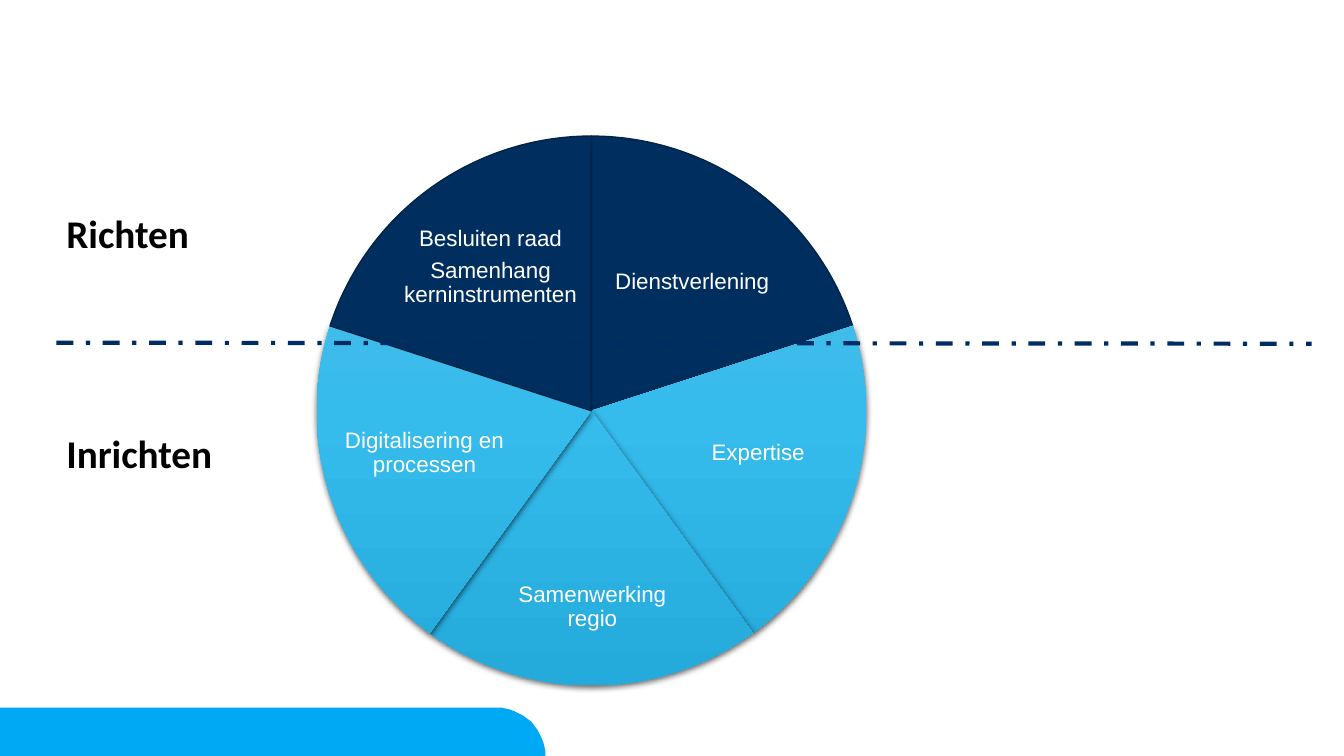
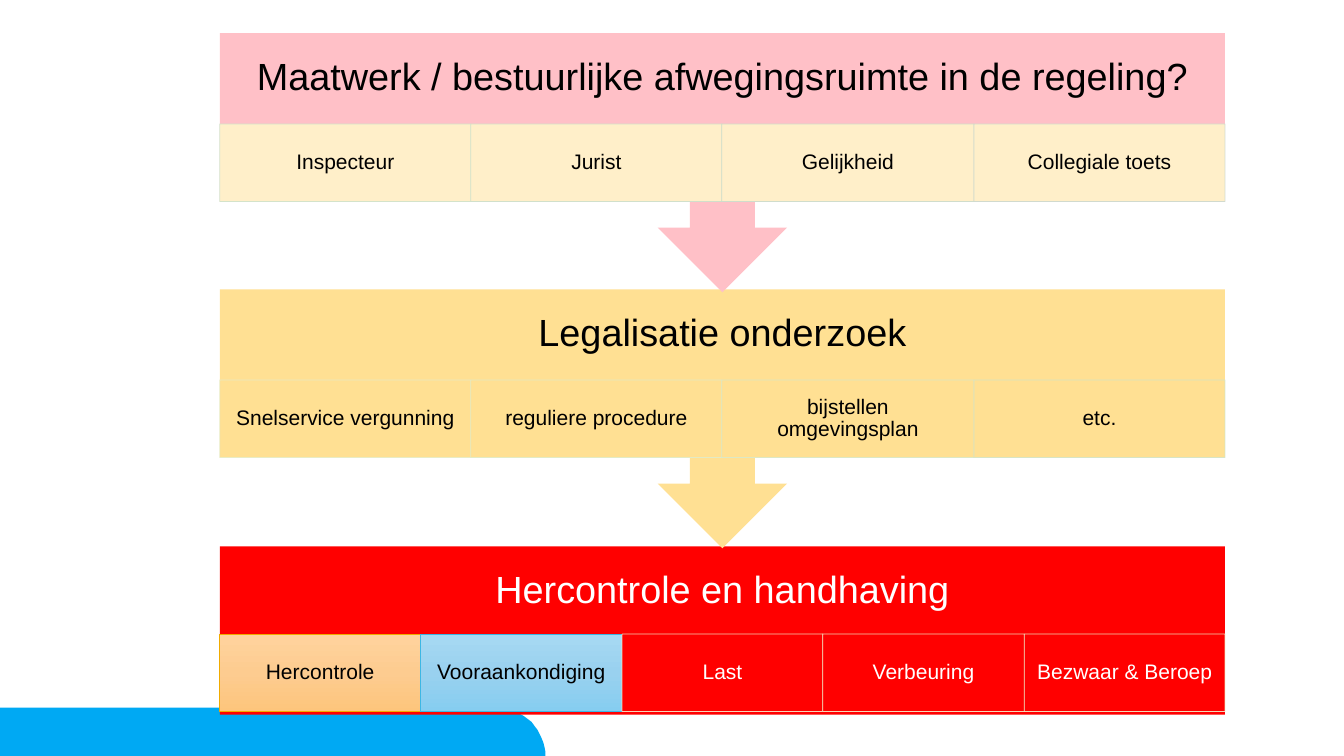
from copy import deepcopy
from dataclasses import dataclass
from math import cos, pi, sin
from typing import Optional, Union

from lxml.etree import SubElement
from pptx import Presentation
from pptx.dml.color import RGBColor
from pptx.enum.dml import MSO_LINE
from pptx.enum.shapes import MSO_CONNECTOR, MSO_SHAPE
from pptx.enum.text import MSO_ANCHOR, MSO_AUTO_SIZE, PP_ALIGN
from pptx.oxml.ns import qn
from pptx.presentation import Presentation as Deck
from pptx.shapes.autoshape import Shape
from pptx.slide import Slide
from pptx.text.text import TextFrame
from pptx.util import Emu, Pt

EMU_PER_PX = 9144
Fill = Union[str, tuple[str, str, str]]


@dataclass(frozen=True)
class Theme:
    body_font: str = "Arial"
    label_font: str = "Calibri"
    label_size: int = 28
    header_size: int = 27
    wedge_size: int = 16
    cell_size: int = 15
    black: str = "000000"
    white: str = "FFFFFF"
    band: str = "00A9F3"
    divider: str = "002C64"
    navy: str = "002F5F"
    navy_edge: str = "002346"
    sky: tuple[str, str, str] = ("5DBFE9", "35BBEC", "25AADC")
    red: str = "FF0000"
    yellow: str = "FFE093"
    cream: str = "FFEFC9"
    pink: str = "FFC0C7"
    peach: tuple[str, str, str] = ("FFD39E", "FDCC90", "FDC57C")
    pale_blue: tuple[str, str, str] = ("A7D9F2", "99D1EF", "86CDF0")


THEME = Theme()


@dataclass(frozen=True)
class Box:
    left: int
    top: int
    width: int
    height: int

    def emu(self) -> tuple[Emu, Emu, Emu, Emu]:
        return px(self.left), px(self.top), px(self.width), px(self.height)


@dataclass(frozen=True)
class Wedge:
    lines: tuple[str, ...]
    text_box: Box
    fill: Fill = THEME.sky
    edge: Optional[str] = None


@dataclass(frozen=True)
class Cell:
    text: str
    fill: Fill
    edge: str
    color: str = THEME.black
    opacity: int = 90


@dataclass(frozen=True)
class Stage:
    title: str
    top: int
    fill: str
    cells: tuple[Cell, ...]
    color: str = THEME.black
    cell_offset: int = 90
    arrow: bool = True


PIE = Box(314, 135, 545, 545)
WEDGES = (
    Wedge(("Dienstverlening",), Box(594, 217, 185, 127), THEME.navy, THEME.navy_edge),
    Wedge(("Expertise",), Box(671, 381, 162, 137)),
    Wedge(("Samenwerking regio",), Box(490, 544, 195, 117)),
    Wedge(("Digitalisering en processen",), Box(340, 381, 162, 137)),
    Wedge(("Besluiten raad", "Samenhang kerninstrumenten"),
          Box(394, 202, 185, 127), THEME.navy, THEME.navy_edge),
)
LABELS = {"Richten": 203, "Inrichten": 421}

STAGE_LEFT, STAGE_WIDTH = 218, 997
BODY_HEIGHT, ARROW_HEIGHT = 167, 257
HEADER_HEIGHT, CELL_HEIGHT = 90, 77
STAGES = (
    Stage("Hercontrole en handhaving", 542, THEME.red, (
        Cell("Hercontrole", THEME.peach, "F0AB00", opacity=100),
        Cell("Vooraankondiging", THEME.pale_blue, "3DB7E4", opacity=100),
        Cell("Last", THEME.red, "F5ECCB", THEME.white),
        Cell("Verbeuring", THEME.red, "F3F0CA", THEME.white),
        Cell("Bezwaar & Beroep", THEME.red, "EFF1CA", THEME.white),
    ), color=THEME.white, cell_offset=87, arrow=False),
    Stage("Legalisatie onderzoek", 287, THEME.yellow, (
        Cell("Snelservice vergunning", THEME.yellow, "E7EECA"),
        Cell("reguliere procedure", THEME.yellow, "E0ECCA"),
        Cell("bijstellen omgevingsplan", THEME.yellow, "DAE9CA"),
        Cell("etc.", THEME.yellow, "D4E6CA"),
    )),
    Stage("Maatwerk / bestuurlijke afwegingsruimte in de regeling?", 33, THEME.pink, (
        Cell("Inspecteur", THEME.cream, "D0E3CA"),
        Cell("Jurist", THEME.cream, "CDE0CB"),
        Cell("Gelijkheid", THEME.cream, "CBDDCC"),
        Cell("Collegiale toets", THEME.cream, "CCD9CF"),
    )),
)


def px(length: int) -> Emu:
    return Emu(length * EMU_PER_PX)


def rgb(color: str) -> RGBColor:
    return RGBColor.from_string(color)


def paint(shape: Shape, fill: Fill) -> None:
    if isinstance(fill, str):
        shape.fill.solid()
        shape.fill.fore_color.rgb = rgb(fill)
        return
    shape.fill.gradient()
    shape.fill.gradient_angle = 270
    stop_list = shape.element.spPr.find(qn("a:gradFill")).find(qn("a:gsLst"))
    stop_list.insert(1, deepcopy(stop_list[0]))
    for index, (stop, color) in enumerate(zip(shape.fill.gradient_stops, fill)):
        stop.position = index / 2
        stop.color.rgb = rgb(color)


def outline(shape: Shape, color: str, width: float, opacity: int = 100) -> None:
    shape.line.color.rgb = rgb(color)
    shape.line.width = Pt(width)
    if opacity < 100:
        color_element = shape.element.xpath("./p:spPr/a:ln//a:srgbClr")[0]
        SubElement(color_element, qn("a:alpha"), val=str(opacity * 1000))


def add_soft_shadow(shape: Shape) -> None:
    effects = shape.element.spPr.find(qn("a:effectLst"))
    shadow = SubElement(effects, qn("a:outerShdw"), blurRad=str(Pt(4.5)),
                        dist=str(Pt(1.5)), dir="5400000", rotWithShape="0")
    color = SubElement(shadow, qn("a:srgbClr"), val=THEME.black)
    SubElement(color, qn("a:alpha"), val="63000")


def add_shape(slide: Slide, kind: MSO_SHAPE, box: Box, fill: Fill) -> Shape:
    shape = slide.shapes.add_shape(kind, *box.emu())
    shape.shadow.inherit = False
    paint(shape, fill)
    shape.line.fill.background()
    return shape


def write_centred(frame: TextFrame, lines: tuple[str, ...], size: int, color: str,
                  insets: tuple[int, int, int, int]) -> None:
    frame.word_wrap = True
    frame.vertical_anchor = MSO_ANCHOR.MIDDLE
    frame.margin_left, frame.margin_top, frame.margin_right, frame.margin_bottom = map(px, insets)
    for index, line in enumerate(lines):
        paragraph = frame.add_paragraph() if index else frame.paragraphs[0]
        paragraph.alignment = PP_ALIGN.CENTER
        paragraph.line_spacing = 0.9
        paragraph.space_after = Pt(size * 0.35)
        run = paragraph.add_run()
        run.text = line
        run.font.name = THEME.body_font
        run.font.size = Pt(size)
        run.font.color.rgb = rgb(color)


def add_master_band(presentation: Deck, slide: Slide) -> None:
    top, bottom, right, radius, steps = 702, 751, 541, 49, 16
    angles = [pi / 2 * step / steps for step in range(steps + 1)]
    corner = [(right - radius + radius * sin(angle), bottom - radius * cos(angle))
              for angle in angles]
    builder = slide.shapes.build_freeform(-1, top, scale=EMU_PER_PX)
    builder.add_line_segments([*corner, (-1, bottom)], close=True)
    band = builder.convert_to_shape()
    band.shadow.inherit = False
    paint(band, THEME.band)
    band.line.fill.background()
    band.element.nvSpPr.cNvPr.set("id", "100")
    presentation.slide_master.shapes.element.append(band.element)


def add_wedge(slide: Slide, wedge: Wedge, index: int) -> None:
    sweep = 360 / len(WEDGES)
    shape = add_shape(slide, MSO_SHAPE.PIE, PIE, wedge.fill)
    for side in range(2):
        shape.adjustments[side] = (270 + sweep * (index + side)) % 360 * 0.6
    if wedge.edge:
        outline(shape, wedge.edge, 1)
    else:
        add_soft_shadow(shape)
    text_box = slide.shapes.add_textbox(*wedge.text_box.emu())
    write_centred(text_box.text_frame, wedge.lines, THEME.wedge_size, THEME.white, (2, 2, 2, 2))


def add_label(slide: Slide, text: str, top: int) -> None:
    frame = slide.shapes.add_textbox(*Box(56, top, 231, 57).emu()).text_frame
    frame.word_wrap = True
    frame.auto_size = MSO_AUTO_SIZE.SHAPE_TO_FIT_TEXT
    run = frame.paragraphs[0].add_run()
    run.text = text
    run.font.name = THEME.label_font
    run.font.size = Pt(THEME.label_size)
    run.font.bold = True
    run.font.color.rgb = rgb(THEME.black)


def add_divider(slide: Slide) -> None:
    divider = slide.shapes.add_connector(MSO_CONNECTOR.STRAIGHT, px(56), px(340), px(1301), px(341))
    divider.line.color.rgb = rgb(THEME.divider)
    divider.line.width = Pt(3)
    divider.line.dash_style = MSO_LINE.DASH_DOT
    SubElement(divider.element.spPr, qn("a:effectLst"))


def add_stage(slide: Slide, stage: Stage) -> None:
    kind = MSO_SHAPE.DOWN_ARROW_CALLOUT if stage.arrow else MSO_SHAPE.RECTANGLE
    height = ARROW_HEIGHT if stage.arrow else BODY_HEIGHT
    body = add_shape(slide, kind, Box(STAGE_LEFT, stage.top, STAGE_WIDTH, height), stage.fill)
    inset = 21
    write_centred(body.text_frame, (stage.title,), THEME.header_size, stage.color,
                  (inset, inset, inset, BODY_HEIGHT - HEADER_HEIGHT + inset))
    count = len(stage.cells)
    edges = [STAGE_LEFT + round(STAGE_WIDTH * index / count) for index in range(count + 1)]
    for cell, left, right in zip(stage.cells, edges, edges[1:]):
        box = Box(left, stage.top + stage.cell_offset, right - left, CELL_HEIGHT)
        shape = add_shape(slide, MSO_SHAPE.RECTANGLE, box, cell.fill)
        outline(shape, cell.edge, 0.5, cell.opacity)
        write_centred(shape.text_frame, (cell.text,), THEME.cell_size, cell.color, (12, 2, 12, 2))


def main() -> None:
    presentation = Presentation()
    presentation.slide_width, presentation.slide_height = px(1333), px(750)
    blank = presentation.slide_layouts[6]

    wheel_slide = presentation.slides.add_slide(blank)
    add_master_band(presentation, wheel_slide)
    for index, wedge in enumerate(WEDGES):
        add_wedge(wheel_slide, wedge, index)
    for text, top in LABELS.items():
        add_label(wheel_slide, text, top)
    add_divider(wheel_slide)

    stages_slide = presentation.slides.add_slide(blank)
    for stage in STAGES:
        add_stage(stages_slide, stage)

    presentation.save("out.pptx")


if __name__ == "__main__":
    main()
